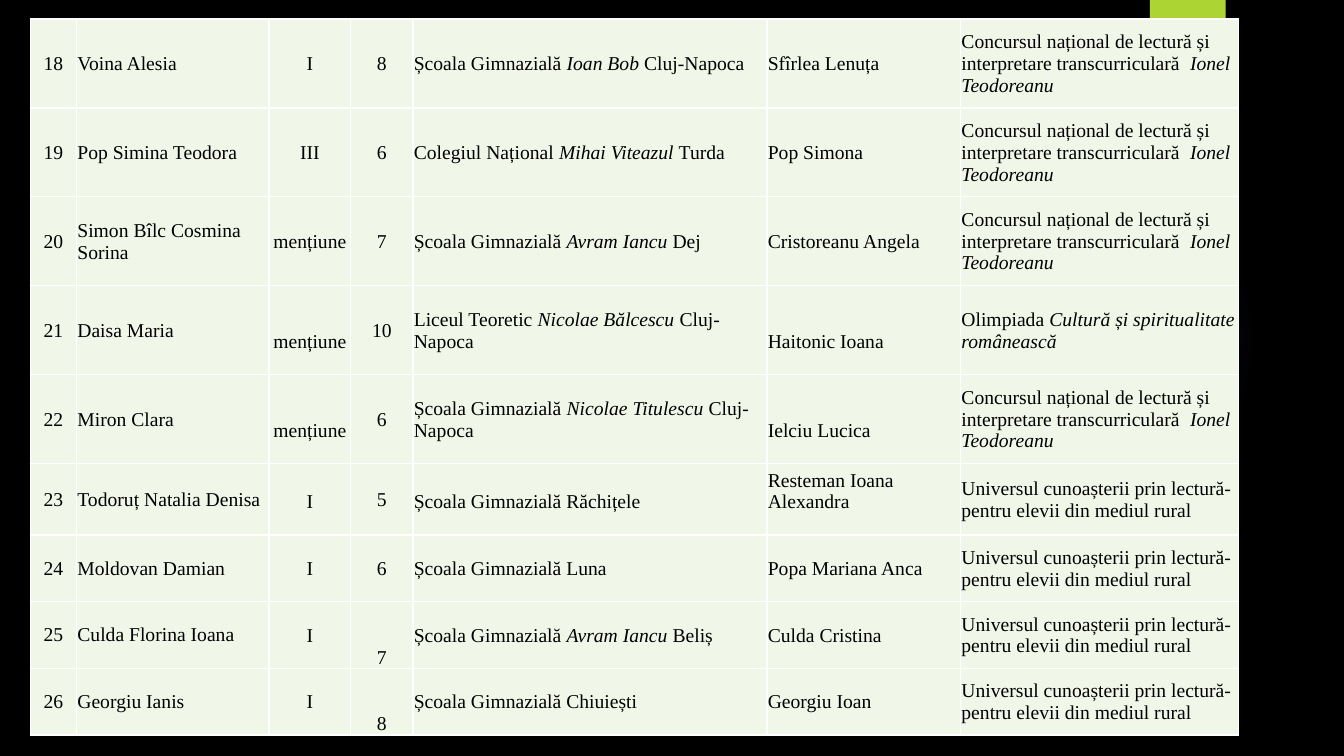
import pptx
import pptx.util
import pptx.dml.color
import pptx.enum.shapes
import pptx.enum.text
import pptx.oxml
import pptx.oxml.ns

Cm = pptx.util.Cm
RGBColor = pptx.dml.color.RGBColor
SHAPE = pptx.enum.shapes.MSO_SHAPE
ANCHOR = pptx.enum.text.MSO_ANCHOR
ALIGN = pptx.enum.text.PP_ALIGN

BLACK = RGBColor(0x00, 0x00, 0x00)
LIME = RGBColor(0xAC, 0xD4, 0x33)
PALE_GREEN = RGBColor(0xF1, 0xF7, 0xE8)
WHITE = RGBColor(0xFF, 0xFF, 0xFF)
SKY = RGBColor(0x7A, 0xC4, 0xF0)
NS = pptx.oxml.ns.nsdecls("a")

# Text between asterisks is italic
READING = "Concursul național de lectură și interpretare transcurriculară  *Ionel Teodoreanu*"
CULTURE = "Olimpiada* Cultură și spiritualitate românească*"
RURAL = "Universul cunoașterii prin lectură- pentru elevii din mediul rural"

# Pupil, prize, grade, school, teacher, contest
FIRST_NUMBER = 18
PUPILS = [
    ("Voina Alesia", "I", "8", "Școala Gimnazială *Ioan Bob *Cluj-Napoca", "Sfîrlea Lenuța", READING),
    ("Pop Simina Teodora", "III", "6", "Colegiul Național *Mihai Viteazul *Turda", "Pop Simona", READING),
    ("Simon Bîlc Cosmina Sorina", "mențiune", "7", "Școala Gimnazială *Avram Iancu *Dej",
     "Cristoreanu Angela", READING),
    ("Daisa Maria", "mențiune", "10", "Liceul Teoretic *Nicolae Bălcescu *Cluj-Napoca",
     "Haitonic Ioana", CULTURE),
    ("Miron Clara", "mențiune", "6", "Școala Gimnazială *Nicolae Titulescu *Cluj-Napoca",
     "Ielciu Lucica", READING),
    ("Todoruț Natalia Denisa", "I", "5", "Școala Gimnazială Răchițele", "Resteman Ioana Alexandra", RURAL),
    ("Moldovan Damian", "I", "6", "Școala Gimnazială Luna", "Popa Mariana Anca", RURAL),
    ("Culda Florina Ioana", "I", "7", "Școala Gimnazială *Avram Iancu *Beliș", "Culda Cristina", RURAL),
    ("Georgiu Ianis", "I", "8", "Școala Gimnazială Chiuiești", "Georgiu Ioan", RURAL),
]
COL_WIDTHS = [1.17, 4.85, 2.06, 1.57, 8.92, 4.88, 7.01]
ROW_HEIGHTS = [2.24] * 5 + [1.8] + [1.68] * 3
CENTRED_COLS = (0, 2, 3)
RAISED_COLS = (2, 4, 5)   # bottom-anchored, one line up, from number 21
GRADE_COL = 3             # on the bottom edge from number 25

CELL = {"margin_left": Cm(0.02), "margin_right": Cm(0.02), "margin_top": Cm(0.02),
        "margin_bottom": Cm(0), "vertical_anchor": ANCHOR.MIDDLE}
BOTTOM = {**CELL, "vertical_anchor": ANCHOR.BOTTOM}
RAISED = {**BOTTOM, "margin_bottom": Cm(0.55)}
FONT = {"name": "Times New Roman", "size": pptx.util.Pt(14), "bold": False}

# Slide
prs = pptx.Presentation()
prs.slide_width, prs.slide_height = Cm(33.87), Cm(19.05)
s = prs.slides.add_slide(prs.slide_layouts[6])
s.background.fill.solid()
s.background.fill.fore_color.rgb = BLACK

# Soft round glow
glow = s.shapes.add_shape(SHAPE.OVAL, Cm(23.9), Cm(4.65), Cm(7.82), Cm(7.82))
glow.shadow.inherit = False
glow.line.fill.background()
stops = "".join(
    f'<a:gs pos="{pos}000"><a:srgbClr val="{SKY}"><a:alpha val="{alpha}000"/></a:srgbClr></a:gs>'
    for pos, alpha in [(0, 7), (36, 6), (69, 0)])
glow.fill.background()
no_fill = glow._element.spPr.find(pptx.oxml.ns.qn("a:noFill"))
no_fill.addnext(pptx.oxml.parse_xml(
    f'<a:gradFill {NS}><a:gsLst>{stops}</a:gsLst><a:path path="circle">'
    '<a:fillToRect l="50000" t="50000" r="50000" b="50000"/></a:path></a:gradFill>'))
glow._element.spPr.remove(no_fill)

# Lime tab at the top
tab = s.shapes.add_shape(SHAPE.RECTANGLE, Cm(28.98), Cm(0), Cm(1.91), Cm(3.18))
tab.shadow.inherit = False
tab.fill.solid()
tab.fill.fore_color.rgb = LIME
tab.line.fill.background()

# Table of prize winners
table = s.shapes.add_table(len(PUPILS), len(COL_WIDTHS), Cm(0.76), Cm(0.48),
                           Cm(sum(COL_WIDTHS)), Cm(sum(ROW_HEIGHTS))).table
table.first_row = table.horz_banding = False
for column, width in zip(table.columns, COL_WIDTHS):
    column.width = Cm(width)
for row, height in zip(table.rows, ROW_HEIGHTS):
    row.height = Cm(height)

for i, pupil in enumerate(PUPILS):
    number = FIRST_NUMBER + i
    for j, text in enumerate((str(number), *pupil)):
        cell = table.cell(i, j)
        cell_format = CELL
        if number >= 21 and j in RAISED_COLS:
            cell_format = RAISED
        elif number >= 25 and j == GRADE_COL:
            cell_format = BOTTOM
        for key, value in cell_format.items():
            setattr(cell, key, value)
        cell.fill.solid()
        cell.fill.fore_color.rgb = PALE_GREEN

        # White borders
        for k, side in enumerate("LRTB"):
            cell._tc.tcPr.insert(k, pptx.oxml.parse_xml(
                f'<a:ln{side} {NS} w="12700"><a:solidFill><a:srgbClr val="{WHITE}"/>'
                f'</a:solidFill></a:ln{side}>'))

        # Text, with every second piece in italics
        p = cell.text_frame.paragraphs[0]
        p.alignment = ALIGN.CENTER if j in CENTRED_COLS else ALIGN.LEFT
        for k, piece in enumerate(text.split("*")):
            if piece:
                r = p.add_run()
                r.text = piece
                for key, value in FONT.items():
                    setattr(r.font, key, value)
                r.font.italic = k % 2 == 1
                r.font.color.rgb = BLACK

prs.save("out.pptx")
